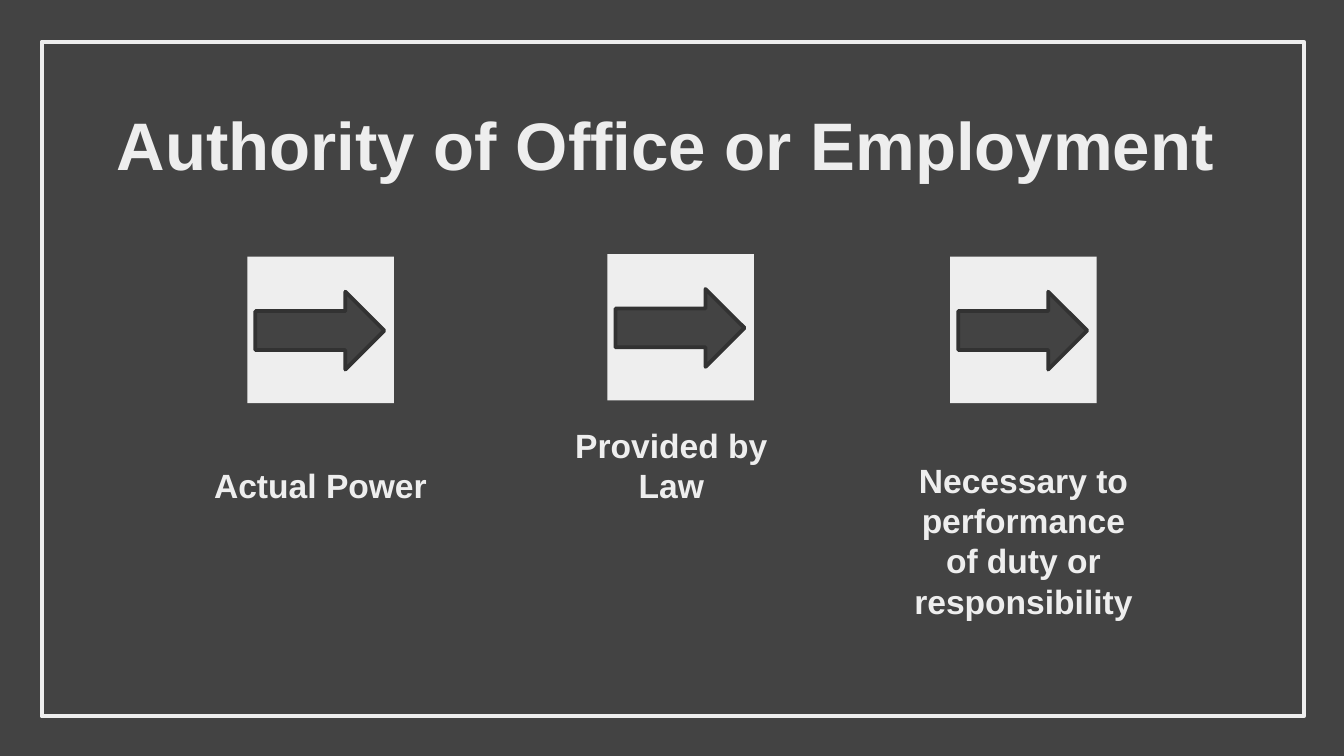
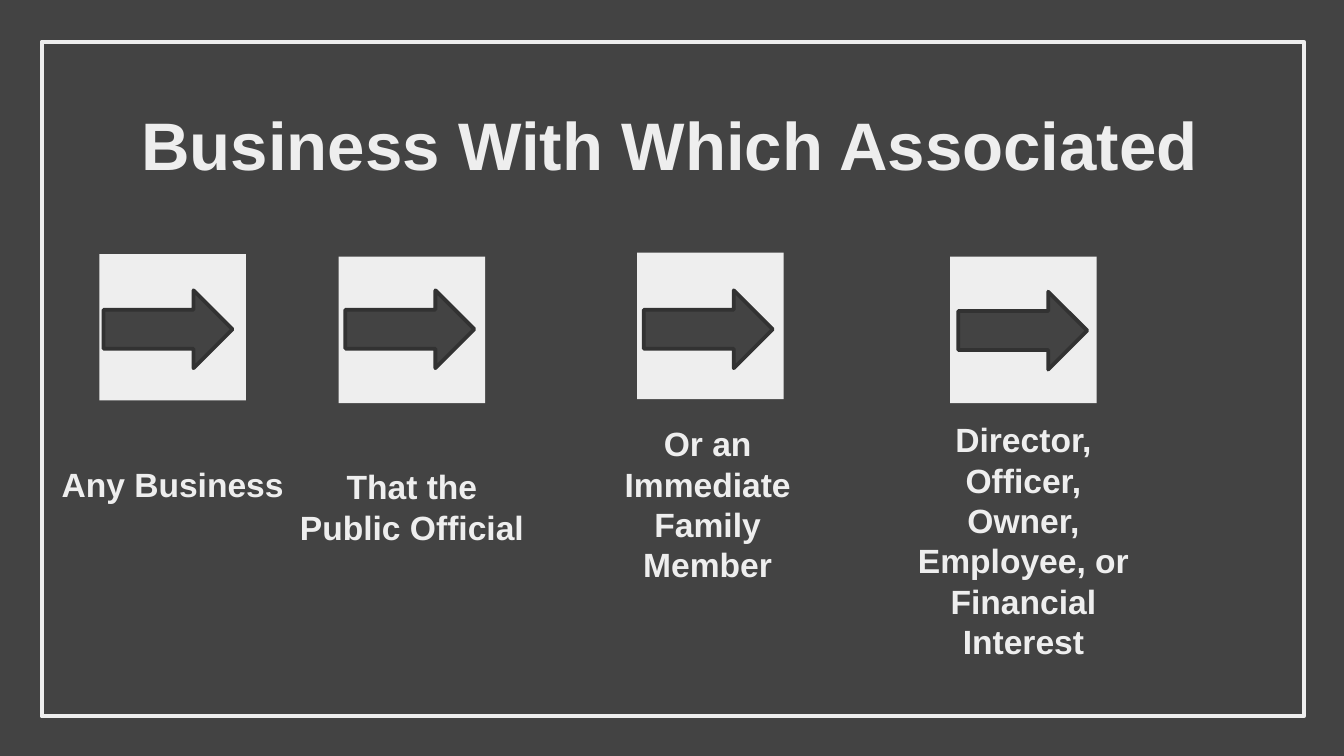
"""Build two slides that break legal terms into their elements."""
from pptx import Presentation
from pptx.dml.color import RGBColor
from pptx.enum import shapes, text
from pptx.util import Inches, Pt

COLORS = {"dark": "434343", "light": "EEEEEE", "edge": "323232"}
FONT = "Arial"
TILE = 1.09
ARROW = (0.96, 0.58)
LABEL = (1.95, 0.6)

# Each element: label, label position, tile position, arrow position
SLIDES = [
    ("Authority of Office or Employment", text.PP_ALIGN.LEFT, [
        ("Actual Power", (1.41, 3.26), (1.84, 1.91), (1.9, 2.17)),
        ("Provided by Law", (4.02, 3.26), (4.52, 1.89), (4.58, 2.15)),
        ("Necessary to performance of duty or responsibility",
         (6.64, 4.12), (7.07, 1.91), (7.13, 2.17)),
    ]),
    ("Business With Which Associated", text.PP_ALIGN.CENTER, [
        ("Any Business", (0.31, 3.25), (0.74, 1.89), (0.77, 2.16)),
        ("That the Public Official", (2.09, 3.57), (2.52, 1.91), (2.57, 2.16)),
        ("Or an Immediate Family Member", (4.29, 3.85), (4.74, 1.88), (4.79, 2.16)),
        ("Director, Officer, Owner, Employee, or Financial Interest",
         (6.64, 4.42), (7.07, 1.91), (7.13, 2.17)),
    ]),
]


def rgb(name):
    return RGBColor.from_string(COLORS[name])


def add_box(s, kind, at, size, fill=None, line=None, width=0):
    sp = s.shapes.add_shape(kind, *map(Inches, at + size))
    sp.shadow.inherit = False
    if fill:
        sp.fill.solid()
        sp.fill.fore_color.rgb = rgb(fill)
    else:
        sp.fill.background()
    if line:
        sp.line.color.rgb = rgb(line)
        sp.line.width = Pt(width)
    else:
        sp.line.fill.background()


def write(sp, words, size, align, anchor):
    tf = sp.text_frame
    tf.word_wrap = True
    tf.auto_size = text.MSO_AUTO_SIZE.NONE
    tf.vertical_anchor = anchor
    tf.margin_left = tf.margin_right = tf.margin_top = tf.margin_bottom = Inches(0.1)
    p = tf.paragraphs[0]
    p.alignment = align
    r = p.add_run()
    r.text = words
    r.font.name, r.font.size, r.font.bold = FONT, Pt(size), True
    r.font.color.rgb = rgb("light")


def add_element(s, label, label_at, tile_at, arrow_at):
    add_box(s, shapes.MSO_SHAPE.RECTANGLE, tile_at, (TILE, TILE), "light")
    add_box(s, shapes.MSO_SHAPE.RIGHT_ARROW, arrow_at, ARROW, "dark", "edge", 2)
    sp = s.shapes.add_textbox(*map(Inches, label_at + LABEL))
    write(sp, label, 18, text.PP_ALIGN.CENTER, text.MSO_ANCHOR.BOTTOM)


def add_slide(prs, title, align, elements):
    s = prs.slides.add_slide(prs.slide_layouts[5])
    add_box(s, shapes.MSO_SHAPE.RECTANGLE, (0.31, 0.31), (9.39, 5.02),
            line="light", width=2.25)
    sp = s.shapes.title
    sp.left, sp.top, sp.width, sp.height = map(Inches, (0.77, 0.67, 8.43, 1.48))
    write(sp, title, 36, align, text.MSO_ANCHOR.TOP)
    for element in elements:
        add_element(s, *element)


def main():
    prs = Presentation()
    prs.slide_width = Inches(10)
    prs.slide_height = prs.slide_width * 9 // 16
    background = prs.slide_master.background.fill
    background.solid()
    background.fore_color.rgb = rgb("dark")
    for slide in SLIDES:
        add_slide(prs, *slide)
    prs.save("out.pptx")


if __name__ == "__main__":
    main()
